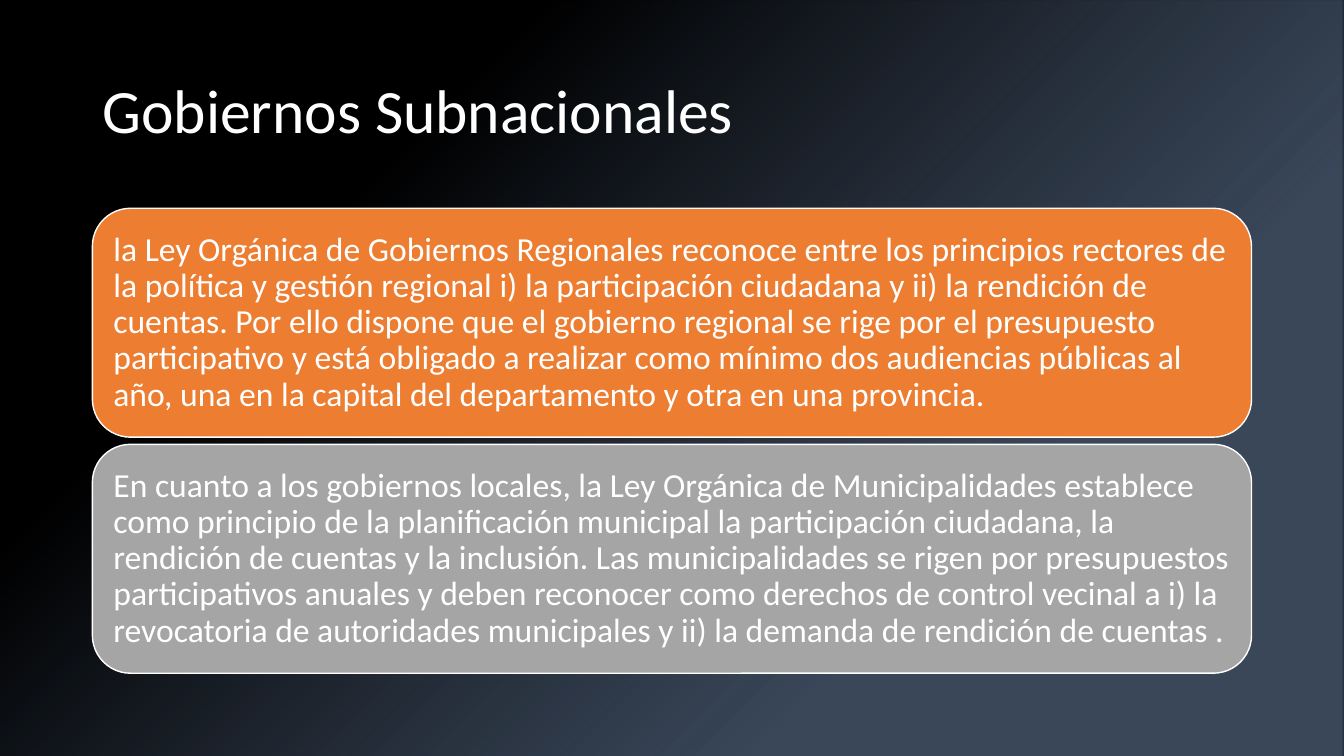
from dataclasses import dataclass

from lxml import etree
from pptx import Presentation
from pptx import util as u
from pptx.dml.color import RGBColor
from pptx.enum import shapes, text
from pptx.oxml import ns

BLACK = RGBColor(0x00, 0x00, 0x00)
WHITE = RGBColor(0xFF, 0xFF, 0xFF)
SLATE = RGBColor(0x44, 0x54, 0x6A)
ORANGE = RGBColor(0xED, 0x7D, 0x31)
GRAY = RGBColor(0xA5, 0xA5, 0xA5)

FONT = "Calibri"
COLUMNS, ROWS = 160, 90
CELL = u.Inches(7.5) / ROWS
MARGIN, CONTENT_WIDTH = 11, 138
TITLE_TOP, TITLE_HEIGHT = 4.8, 17.4
CARD_TOP, CARD_HEIGHT, CARD_STEP = 24.8, 27.25, 28.1


@dataclass(frozen=True)
class Card:
    wording: str
    color: RGBColor


CARDS = [
    Card(
        "la Ley Orgánica de Gobiernos Regionales reconoce entre los principios "
        "rectores de la política y gestión regional i) la participación ciudadana "
        "y ii) la rendición de cuentas. Por ello dispone que el gobierno regional "
        "se rige por el presupuesto participativo y está obligado a realizar como "
        "mínimo dos audiencias públicas al año, una en la capital del departamento "
        "y otra en una provincia.",
        ORANGE,
    ),
    Card(
        "En cuanto a los gobiernos locales, la Ley Orgánica de Municipalidades "
        "establece como principio de la planificación municipal la participación "
        "ciudadana, la rendición de cuentas y la inclusión. Las municipalidades se "
        "rigen por presupuestos participativos anuales y deben reconocer como "
        "derechos de control vecinal a i) la revocatoria de autoridades municipales "
        "y ii) la demanda de rendición de cuentas .",
        GRAY,
    ),
]


def cells(count: float) -> int:
    return round(count * CELL)


def write(shape, wording: str, *, size: float, inset: float = 0.1) -> None:
    frame = shape.text_frame
    frame.word_wrap = True
    frame.auto_size = text.MSO_AUTO_SIZE.NONE
    frame.vertical_anchor = text.MSO_ANCHOR.MIDDLE
    frame.margin_left = frame.margin_right = u.Inches(0.1)
    frame.margin_top = frame.margin_bottom = u.Inches(inset)
    paragraph = frame.paragraphs[0]
    paragraph.alignment = text.PP_ALIGN.LEFT
    paragraph.line_spacing = 0.9
    run = paragraph.add_run()
    run.text = wording
    run.font.name = FONT
    run.font.size = u.Pt(size)
    run.font.color.rgb = WHITE


def add_backdrop(slide) -> None:
    slide.background.fill.solid()
    slide.background.fill.fore_color.rgb = BLACK
    backdrop = slide.shapes.add_shape(
        shapes.MSO_SHAPE.RECTANGLE, 0, 0, cells(COLUMNS), cells(ROWS)
    )
    backdrop.shadow.inherit = False
    backdrop.line.fill.background()
    backdrop.fill.solid()
    gradient = etree.fromstring(
        f'<a:gradFill {ns.nsdecls("a")} rotWithShape="1"><a:gsLst>'
        f'<a:gs pos="28000"><a:srgbClr val="{SLATE}"><a:alpha val="84000"/></a:srgbClr></a:gs>'
        f'<a:gs pos="74000"><a:srgbClr val="{BLACK}"/></a:gs></a:gsLst>'
        '<a:path path="circle"><a:fillToRect l="100000" t="100000"/></a:path></a:gradFill>'
    )
    properties = backdrop.element.spPr
    properties.replace(properties.find(ns.qn("a:solidFill")), gradient)
    slide.shapes.title.element.addprevious(backdrop.element)


def add_title(slide, wording: str) -> None:
    title = slide.shapes.title
    title.left, title.top = cells(MARGIN), cells(TITLE_TOP)
    title.width, title.height = cells(CONTENT_WIDTH), cells(TITLE_HEIGHT)
    write(title, wording, size=44, inset=0.05)


def add_card(slide, card: Card, position: int) -> None:
    shape = slide.shapes.add_shape(
        shapes.MSO_SHAPE.ROUNDED_RECTANGLE,
        cells(MARGIN),
        cells(CARD_TOP + position * CARD_STEP),
        cells(CONTENT_WIDTH),
        cells(CARD_HEIGHT),
    )
    shape.shadow.inherit = False
    shape.fill.solid()
    shape.fill.fore_color.rgb = card.color
    shape.line.color.rgb = WHITE
    shape.line.width = u.Pt(1)
    write(shape, card.wording, size=24)


def main() -> None:
    presentation = Presentation()
    presentation.slide_width = cells(COLUMNS)
    presentation.slide_height = cells(ROWS)
    slide = presentation.slides.add_slide(
        presentation.slide_layouts.get_by_name("Title Only")
    )
    add_backdrop(slide)
    add_title(slide, "Gobiernos Subnacionales")
    for position, card in enumerate(CARDS):
        add_card(slide, card, position)
    presentation.save("out.pptx")


if __name__ == "__main__":
    main()
